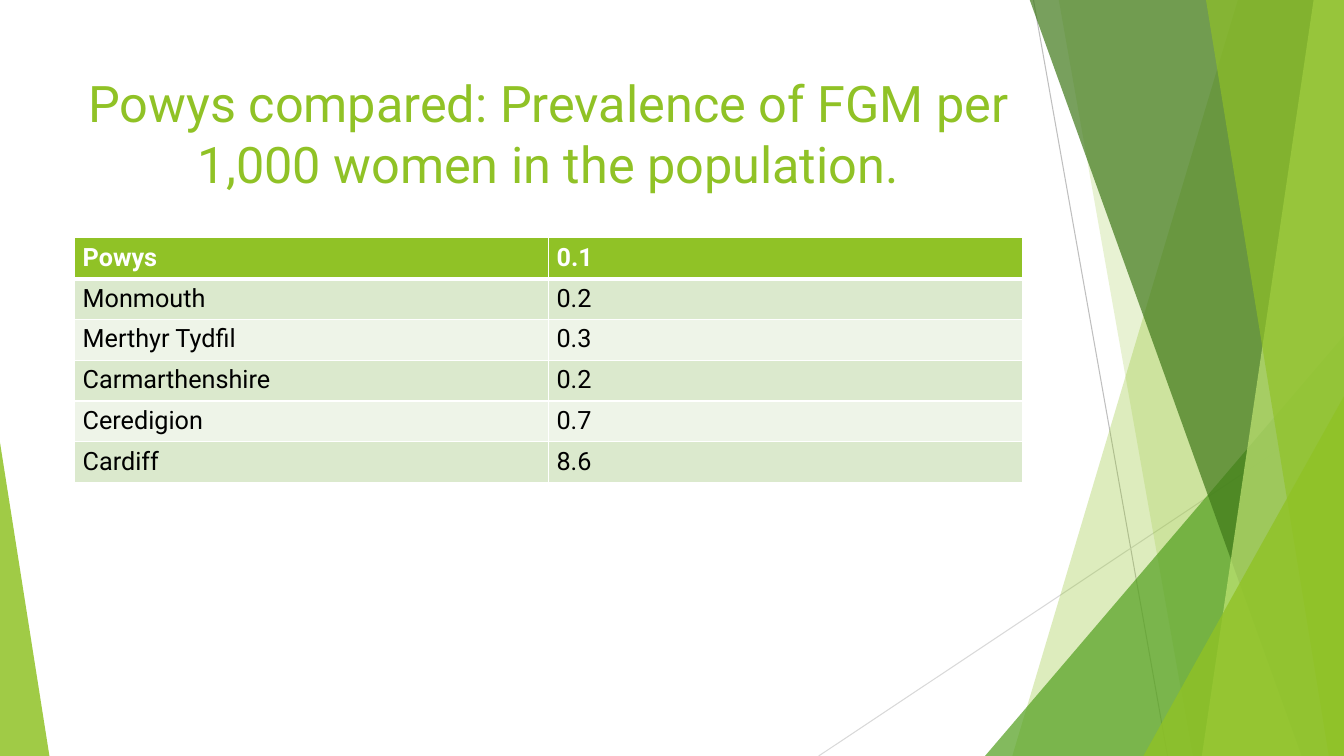
from lxml import etree
from pptx import Presentation
from pptx.dml.color import RGBColor
from pptx.enum import shapes, text
from pptx.oxml import ns
from pptx.util import Inches, Pt

COLORS = {
    "white": "FFFFFF", "black": "000000", "lime": "90C226", "green": "54A021",
    "forest": "3F7819", "pale": "C0E474", "silver": "BFBFBF", "mist": "D9D9D9",
    "band_dark": "DBE9CD", "band_light": "EEF4E8",
}
FONT = "Roboto"
WIDTH, HEIGHT = 13.33, 7.5
RATES = [
    ("Powys", "0.1"), ("Monmouth", "0.2"), ("Merthyr Tydfil", "0.3"),
    ("Carmarthenshire", "0.2"), ("Ceredigion", "0.7"), ("Cardiff", "8.6"),
]


def rgb(name):
    return RGBColor.from_string(COLORS[name])


def add_span(para, words, size, color, bold=False):
    span = para.add_run()
    span.text = words
    span.font.name, span.font.size, span.font.bold = FONT, Pt(size), bold
    span.font.color.rgb = rgb(color)


def paint(shape, color, opacity):
    """Fill a borderless shape; opacity is a percentage."""
    shape.shadow.inherit = False
    shape.line.fill.background()
    shape.fill.solid()
    shape.fill.fore_color.rgb = rgb(color)
    tone = shape._element.spPr.find(ns.qn("a:solidFill"))[0]
    etree.SubElement(tone, ns.qn("a:alpha")).set("val", str(opacity * 1000))


def add_thin_line(page, start, end, color):
    line = page.shapes.add_connector(
        shapes.MSO_CONNECTOR.STRAIGHT, *map(Inches, start + end))
    line.line.color.rgb = rgb(color)
    line.line.width = Pt(0.75)
    etree.SubElement(line._element.spPr, ns.qn("a:effectLst"))


def add_shard(page, top_x, bottom_x, color, opacity):
    """Full-height shard from a slanted left edge to the right page edge."""
    outline = page.shapes.build_freeform(
        Inches(top_x), Inches(-0.01), scale=1.0)
    corners = [(WIDTH, -0.01), (WIDTH, HEIGHT), (bottom_x, HEIGHT)]
    outline.add_line_segments(
        [(Inches(x), Inches(y)) for x, y in corners], close=True)
    paint(outline.convert_to_shape(), color, opacity)


def add_corner(page, left, top, right, apex, color, opacity):
    """Triangle standing on the bottom page edge."""
    corner = page.shapes.add_shape(
        shapes.MSO_SHAPE.ISOSCELES_TRIANGLE, Inches(left), Inches(top),
        Inches(right - left), Inches(HEIGHT - top))
    corner.adjustments[0] = apex
    paint(corner, color, opacity)


def add_facets(page):
    add_thin_line(page, (10.25, 0), (11.58, HEIGHT), "silver")
    add_thin_line(page, (WIDTH, 4.03), (8.12, HEIGHT), "mist")
    add_shard(page, 12.28, 10.04, "lime", 30)
    add_shard(page, 10.5, 11.83, "lime", 20)
    add_corner(page, 9.77, 3.33, WIDTH, 1, "green", 72)
    add_shard(page, 10.21, 12.91, "forest", 70)
    add_shard(page, 13.03, 11.92, "pale", 70)
    add_shard(page, 11.96, 13.18, "lime", 65)
    add_corner(page, 11.34, 3.93, WIDTH, 1, "lime", 80)
    add_corner(page, 0, 4.39, 0.49, 0, "lime", 85)


def add_title(page, left, top, width, height):
    box = page.shapes.add_textbox(*map(Inches, (left, top, width, height)))
    frame = box.text_frame
    frame.word_wrap = True
    frame.vertical_anchor = text.MSO_ANCHOR.TOP
    para = frame.paragraphs[0]
    para.alignment = text.PP_ALIGN.CENTER
    add_span(para, "Powys compared: Prevalence of FGM per 1,000 women "
             "in the population.", 36, "lime")


def set_borders(cell, bottom):
    props = cell._tc.get_or_add_tcPr()
    edges = [("L", 1), ("R", 1), ("T", 1), ("B", bottom)]
    for place, (side, points) in enumerate(edges):
        edge = etree.Element(ns.qn("a:ln" + side), w=str(Pt(points)))
        fill = etree.SubElement(edge, ns.qn("a:solidFill"))
        etree.SubElement(fill, ns.qn("a:srgbClr"), val=COLORS["white"])
        props.insert(place, edge)


def add_rates_table(page, left, top, width, height):
    table = page.shapes.add_table(
        len(RATES), 2, *map(Inches, (left, top, width, height))).table
    for r, rate in enumerate(RATES):
        header = r == 0
        band = "lime" if header else "band_dark" if r % 2 else "band_light"
        for c, words in enumerate(rate):
            cell = table.cell(r, c)
            cell.margin_left = cell.margin_right = Inches(0.08)
            cell.margin_top = cell.margin_bottom = Inches(0.05)
            cell.fill.solid()
            cell.fill.fore_color.rgb = rgb(band)
            set_borders(cell, 3 if header else 1)
            add_span(cell.text_frame.paragraphs[0], words, 18,
                     "white" if header else "black", header)


def main():
    deck = Presentation()
    deck.slide_width, deck.slide_height = Inches(WIDTH), Inches(HEIGHT)
    page = deck.slides.add_slide(deck.slide_layouts[6])
    add_facets(page)
    add_title(page, 0.74, 0.67, 9.4, 1.44)
    add_rates_table(page, 0.74, 2.36, 9.4, 2.43)
    deck.save("out.pptx")


if __name__ == "__main__":
    main()
